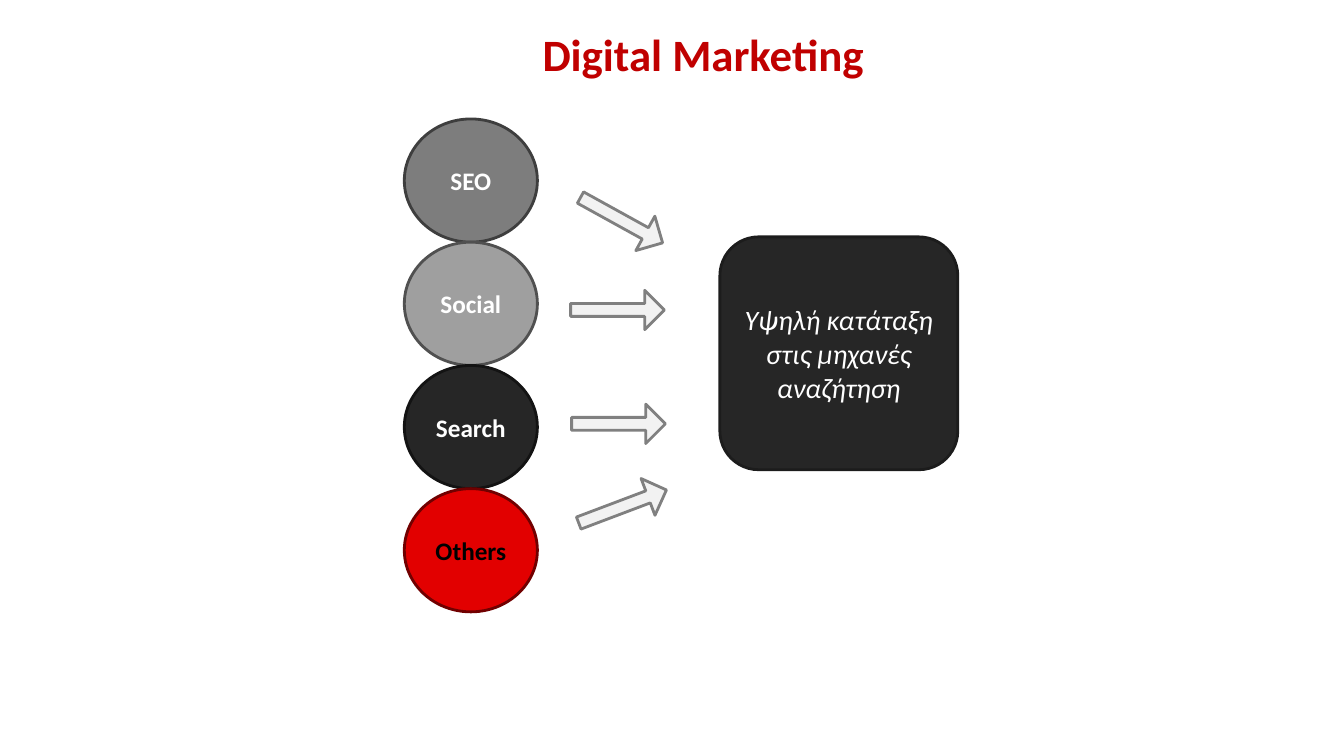
from pptx import Presentation
from pptx.dml.color import RGBColor
from pptx.enum.shapes import MSO_SHAPE
from pptx.enum.text import MSO_ANCHOR, PP_ALIGN
from pptx.util import Inches, Pt

FONT = "Calibri"
COLORS = {
    "title": "C00000", "white": "FFFFFF", "black": "000000",
    "gray": "7D7D7D", "gray_edge": "3E3E3E",
    "silver": "9F9F9F", "silver_edge": "505050",
    "dark": "262626", "dark_edge": "131313",
    "red": "E20000", "red_edge": "710000",
    "result_edge": "1C1C1C", "arrow": "F2F2F2", "arrow_edge": "808080",
}
# Label, fill, edge, text colour
CHANNELS = [
    ("SEO", "gray", "gray_edge", "white"),
    ("Social", "silver", "silver_edge", "white"),
    ("Search", "dark", "dark_edge", "white"),
    ("Others", "red", "red_edge", "black"),
]
# Left and top offset inside the arrow region, rotation in degrees
ARROWS = [(0.04, 0, 28.9), (0, 0.89, 0), (0.01, 2.02, 0), (0.05, 2.84, 339.3)]
ARROW_SIZE = (0.93, 0.39)


def color(name):
    return RGBColor.from_string(COLORS[name])


def write(shape, text, size, ink, bold=False, italic=False, wrap=True):
    frame = shape.text_frame
    frame.word_wrap = wrap
    para = frame.paragraphs[0]
    para.alignment = PP_ALIGN.CENTER
    span = para.add_run()
    span.text = text
    span.font.name = FONT
    span.font.size = Pt(size)
    span.font.bold = bold
    span.font.italic = italic
    span.font.color.rgb = color(ink)


def add_figure(page, kind, box, fill, edge):
    shape = page.shapes.add_shape(kind, *map(Inches, box))
    shape.shadow.inherit = False
    shape.fill.solid()
    shape.fill.fore_color.rgb = color(fill)
    shape.line.color.rgb = color(edge)
    shape.line.width = Pt(2)
    shape.text_frame.vertical_anchor = MSO_ANCHOR.MIDDLE
    return shape


def add_title(page, box):
    title = page.shapes.add_textbox(*map(Inches, box))
    write(title, "Digital Marketing", 32, "title", bold=True)


def add_channels(page, box):
    left, top, width, height = box
    row = height / len(CHANNELS)
    for index, (label, fill, edge, ink) in enumerate(CHANNELS):
        place = (left, top + index * row, width, row)
        circle = add_figure(page, MSO_SHAPE.OVAL, place, fill, edge)
        write(circle, label, 18, ink, bold=True, wrap=False)


def add_result(page, box):
    result = add_figure(page, MSO_SHAPE.ROUNDED_RECTANGLE, box, "dark", "result_edge")
    write(result, "Υψηλή κατάταξη στις μηχανές αναζήτηση", 20, "white", italic=True)


def add_arrows(page, left, top):
    for across, down, angle in ARROWS:
        place = (left + across, top + down, *ARROW_SIZE)
        arrow = add_figure(page, MSO_SHAPE.RIGHT_ARROW, place, "arrow", "arrow_edge")
        arrow.adjustments[0] = 0.327
        arrow.adjustments[1] = 0.5
        arrow.rotation = angle


def main():
    deck = Presentation()
    deck.slide_width, deck.slide_height = Inches(13.33), Inches(7.5)
    page = deck.slides.add_slide(deck.slide_layouts[6])
    # Heading
    add_title(page, (2.85, 0.22, 8.25, 0.64))
    # Marketing channels leading to the search ranking
    add_channels(page, (4.01, 1.18, 1.32, 4.89))
    add_result(page, (7.14, 2.35, 2.36, 2.31))
    add_arrows(page, 5.66, 1.99)
    deck.save("out.pptx")


if __name__ == "__main__":
    main()
